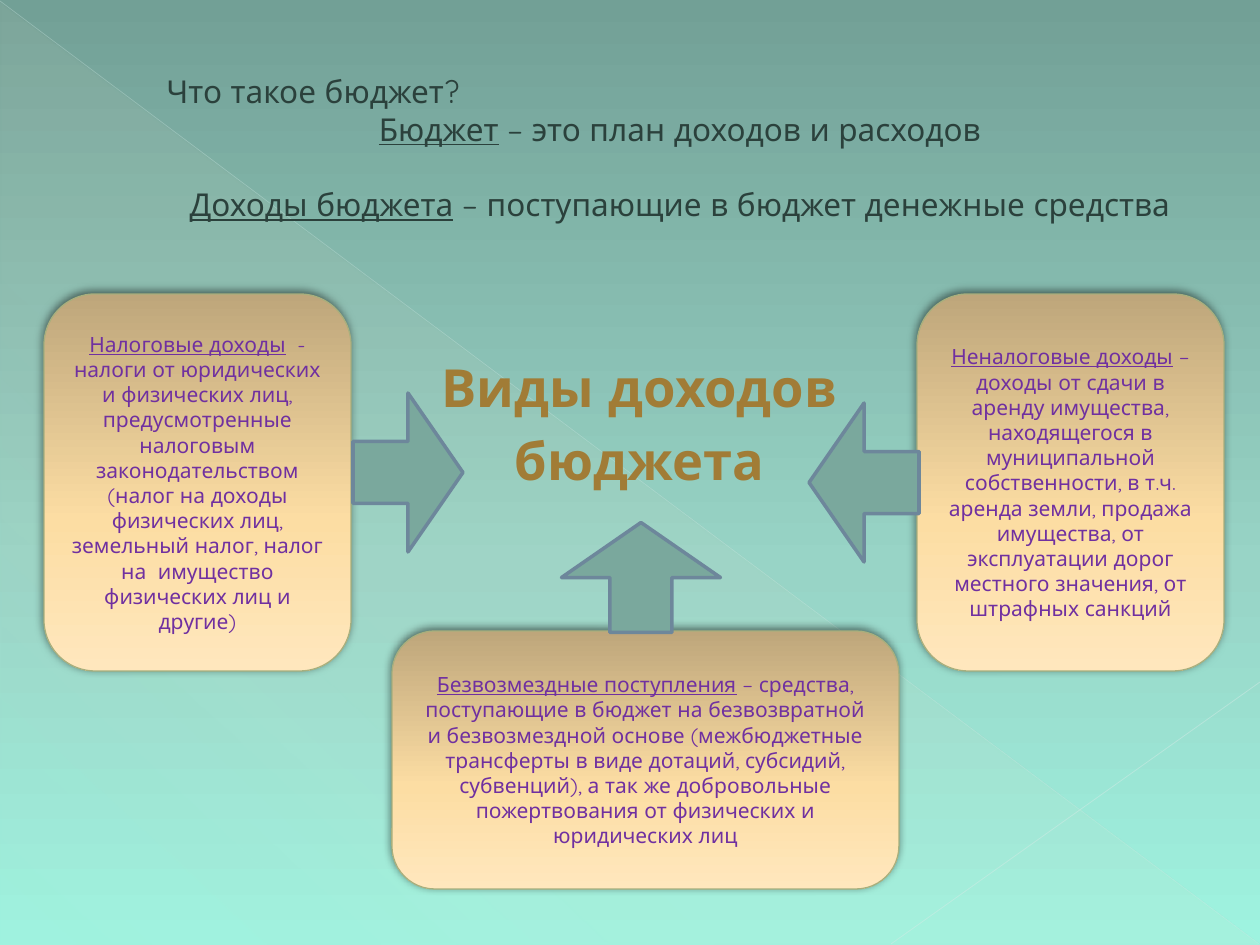
from pptx import Presentation
from pptx import util as u
from pptx.dml.color import RGBColor
from pptx.enum import shapes, text
from pptx.oxml import parse_xml
from pptx.oxml.ns import nsdecls, qn

PX = u.Inches(1) / 126
FONT = "Quicksand"
COLOURS = {"ink": "2B413C", "title": "A17C36", "purple": "7030A0",
           "card_line": "A8AF7D", "arrow": "7AA89D", "arrow_line": "6D879B",
           "shadow": "000000"}

# Gradient stops: position %, colour, opacity %
BACKGROUND = [(0, "72A096", 100), (60, "98D4C6", 100), (100, "9EF3E0", 100)]
GLOW = [(0, "EBDDC3", 10), (70, "EBDDC3", 8), (100, "EBDDC3", 1)]
CARD = [(0, "BEA67B", 100), (60, "FCDDA3", 100), (100, "FFE7BD", 100)]

# Rays: from, to, colour, width in points, opacity %
RAYS = [((0, 1), (1259, 944), "D2EAE4", 0.39, 35),
        ((1260, 682), (891, 944), "D6ECE7", 0.47, 45)]

# Paragraphs: underlined term, plain remainder
INTRO = [("", "Что такое бюджет?"),
         ("Бюджет", " – это план доходов и расходов"),
         ("Доходы бюджета", " – поступающие в бюджет денежные средства")]
HEADING = [("", "Виды доходов"), ("", "бюджета")]
CARDS = [
    ((917, 294, 307, 377), "Неналоговые доходы",
     " – доходы от сдачи в аренду имущества, находящегося в муниципальной "
     "собственности, в т.ч. аренда земли, продажа имущества, от эксплуатации "
     "дорог местного значения, от штрафных санкций"),
    ((44, 294, 307, 377), "Налоговые доходы",
     "  - налоги от юридических и физических лиц, предусмотренные налоговым "
     "законодательством (налог на доходы физических лиц, земельный налог, "
     "налог на  имущество физических лиц и другие)"),
    ((392, 631, 507, 258), "Безвозмездные поступления",
     " – средства, поступающие в бюджет на безвозвратной и безвозмездной "
     "основе (межбюджетные трансферты в виде дотаций, субсидий, субвенций), "
     "а так же добровольные пожертвования от физических и юридических лиц"),
]
ARROW_SIZE = (110, 159)
ARROWS = [(586, 498, 270), (353, 393, 0), (809, 403, 180)]  # left, top, turn


def px(*lengths):
    return [round(length * PX) for length in lengths]


def gradient(stops, angle):
    marks = "".join(
        f'<a:gs pos="{pos * 1000}"><a:srgbClr val="{colour}">'
        f'<a:alpha val="{alpha * 1000}"/></a:srgbClr></a:gs>'
        for pos, colour, alpha in stops)
    return parse_xml(f'<a:gradFill {nsdecls("a")} rotWithShape="1"><a:gsLst>{marks}'
                     f'</a:gsLst><a:lin ang="{angle * 60000}" scaled="0"/></a:gradFill>')


def set_line(line, colour, width):
    line.color.rgb = RGBColor.from_string(colour)
    line.width = u.Pt(width)


def add_shape(kind, place):
    shape = page.shapes.add_shape(kind, *px(*place))
    shape.shadow.inherit = False
    return shape


def add_gradient_shape(kind, place, stops, angle):
    shape = add_shape(kind, place)
    shape.element.spPr.find(qn("a:prstGeom")).addnext(gradient(stops, angle))
    return shape


def write(frame, paragraphs, size, colour, bold=False):
    frame.word_wrap = True
    for number, (term, rest) in enumerate(paragraphs):
        para = frame.add_paragraph() if number else frame.paragraphs[0]
        para.alignment = text.PP_ALIGN.CENTER
        for words, underlined in ((term, True), (rest, False)):
            if words:
                span = para.add_run()
                span.text = words
                font = span.font
                font.name, font.size = FONT, u.Pt(size)
                font.bold, font.underline = bold, underlined
                font.color.rgb = RGBColor.from_string(COLOURS[colour])


deck = Presentation()
deck.slide_width, deck.slide_height = px(1260, 945)
page = deck.slides.add_slide(deck.slide_layouts[6])

# Background, glow and rays
page.background.fill.solid()
plain = page.element.find(".//" + qn("p:bgPr")).find(qn("a:solidFill"))
plain.getparent().replace(plain, gradient(BACKGROUND, 90))

glow = add_gradient_shape(shapes.MSO_SHAPE.RIGHT_TRIANGLE, (1, 3, 1258, 942), GLOW, 133)
glow.line.fill.background()

for start, end, colour, width, alpha in RAYS:
    ray = page.shapes.add_connector(shapes.MSO_CONNECTOR.STRAIGHT, *px(*start, *end))
    set_line(ray.line, colour, width)
    ray.element.spPr.find(".//" + qn("a:srgbClr")).append(
        parse_xml(f'<a:alpha {nsdecls("a")} val="{alpha * 1000}"/>'))
    ray.element.spPr.append(parse_xml(f'<a:effectLst {nsdecls("a")}/>'))

# Heading in the middle
heading = page.shapes.add_textbox(*px(39, 355, 1201, 145)).text_frame
heading.margin_top = heading.margin_bottom = 0
write(heading, HEADING, 30, "title", bold=True)
heading.paragraphs[1].space_before = u.Pt(6)

# Definitions at the top
intro = page.shapes.add_textbox(*px(154, 66, 1052, 165)).text_frame
write(intro, INTRO, 18, "ink")
intro.paragraphs[0].alignment = text.PP_ALIGN.LEFT
intro.paragraphs[2].space_before = u.Pt(21.5)

# Income cards
for place, term, rest in CARDS:
    card = add_gradient_shape(shapes.MSO_SHAPE.ROUNDED_RECTANGLE, place, CARD, 90)
    set_line(card.line, COLOURS["card_line"], 0.75)
    card.element.spPr.find(qn("a:effectLst")).append(parse_xml(
        f'<a:outerShdw {nsdecls("a")} blurRad="{u.Pt(5)}" dist="{u.Pt(2)}" '
        f'dir="{245 * 60000}" rotWithShape="0"><a:srgbClr val="{COLOURS["shadow"]}">'
        '<a:alpha val="50000"/></a:srgbClr></a:outerShdw>'))
    card.text_frame.vertical_anchor = text.MSO_ANCHOR.MIDDLE
    write(card.text_frame, [(term, rest)], 12, "purple")

# Arrows towards the heading
for left, top, turn in ARROWS:
    arrow = add_shape(shapes.MSO_SHAPE.RIGHT_ARROW, (left, top, *ARROW_SIZE))
    arrow.adjustments[0], arrow.adjustments[1] = 0.39, 0.5
    arrow.rotation = turn
    arrow.fill.solid()
    arrow.fill.fore_color.rgb = RGBColor.from_string(COLOURS["arrow"])
    set_line(arrow.line, COLOURS["arrow_line"], 2)

deck.save("out.pptx")
